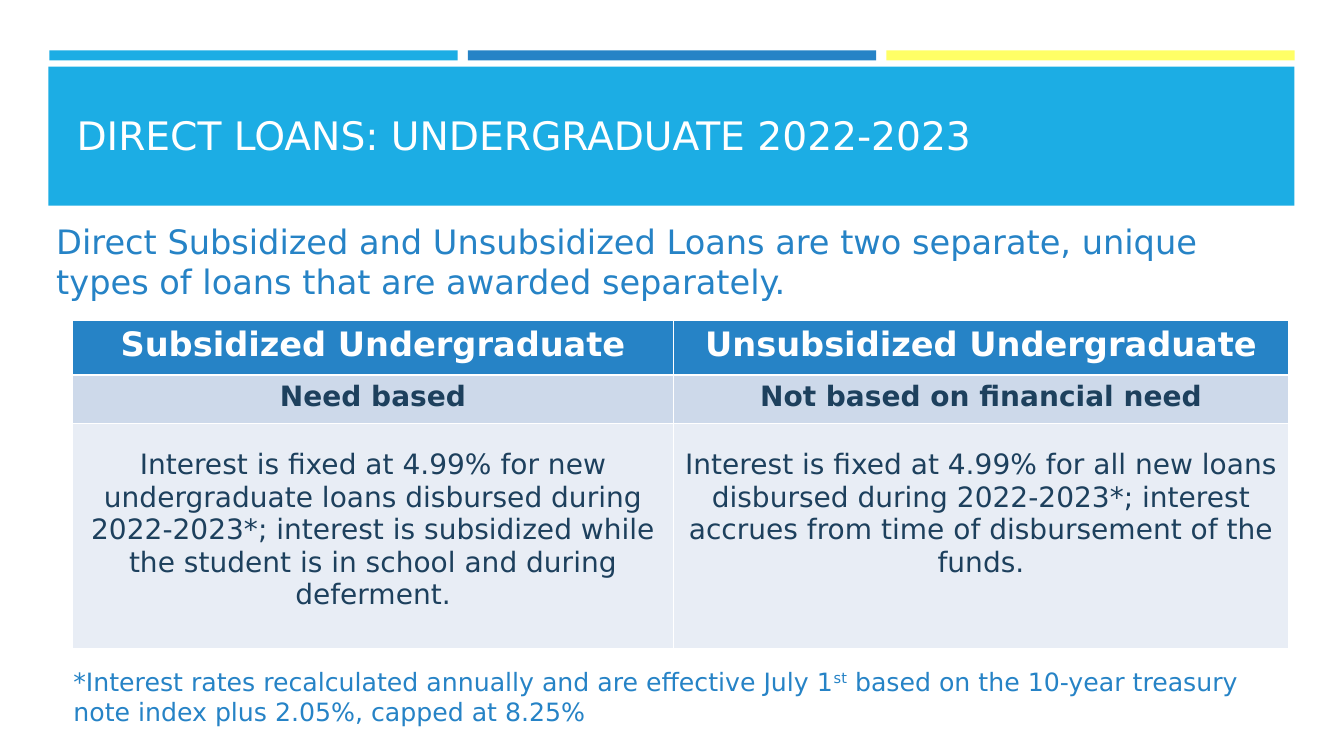
from lxml import etree
from pptx import Presentation
from pptx.dml.color import RGBColor
from pptx.enum.shapes import MSO_SHAPE as Shape
from pptx.enum.text import MSO_ANCHOR as Anchor, PP_ALIGN as Align
from pptx.oxml import parse_xml
from pptx.oxml.ns import nsdecls
from pptx.util import Inches, Pt

COLORS = {"sky": "1CADE4", "blue": "2683C6", "yellow": "FFFF66", "white": "FFFFFF",
          "navy": "1D405D", "band": "CDD9EA", "pale": "E8EDF5"}
FONT = "DejaVu Sans"


def color(name):
    return RGBColor.from_string(COLORS[name])


def style(paragraph, size, color_name, bold=False):
    """Set the font of a whole paragraph."""
    font = paragraph.font
    font.name, font.size, font.bold = FONT, Pt(size), bold
    font.color.rgb = color(color_name)


presentation = Presentation()
presentation.slide_width, presentation.slide_height = Inches(13.33), Inches(7.5)
slide = presentation.slides.add_slide(presentation.slide_layouts[5])
shapes = slide.shapes

# Three accent bars above the title band
bar_width, bar_step = 4.05, 4.15
bars = [(0.49 + bar_step * i, 0.5, bar_width, 0.1, name)
        for i, name in enumerate(("sky", "blue", "yellow"))]
title_band = (0.48, 0.66, 12.36, 1.38, "sky")
for *box, fill in bars + [title_band]:
    rectangle = shapes.add_shape(Shape.RECTANGLE, *map(Inches, box))
    rectangle.shadow.inherit = False
    rectangle.fill.solid()
    rectangle.fill.fore_color.rgb = color(fill)
    rectangle.line.fill.background()

# Title, brought in front of its band
title = shapes.title
title.left, title.top, title.width, title.height = map(Inches, (0.63, 0.8, 12.06, 1.08))
shapes._spTree.append(title._element)
frame = title.text_frame
frame.text = "DIRECT LOANS: UNDERGRADUATE 2022-2023"
frame.vertical_anchor = Anchor.MIDDLE
frame.margin_left = frame.margin_right = frame.margin_top = frame.margin_bottom = Inches(0.13)
frame.paragraphs[0].alignment = Align.LEFT
style(frame.paragraphs[0], 28, "white")

# Introduction and footnote; each run is (text, is superscript)
texts = [
    ((0.46, 2.14, 12.4, 1), 24, [
        ("Direct Subsidized and Unsubsidized Loans are two separate, unique types of loans "
         "that are awarded separately.", False)]),
    ((0.63, 6.56, 12.14, 0.71), 18, [
        ("*Interest rates recalculated annually and are effective July 1", False),
        ("st", True),
        (" based on the 10-year treasury note index plus 2.05%, capped at 8.25%", False)]),
]
for box, size, runs in texts:
    frame = shapes.add_textbox(*map(Inches, box)).text_frame
    frame.word_wrap = True
    paragraph = frame.paragraphs[0]
    style(paragraph, size, "blue")
    for text, superscript in runs:
        run = paragraph.add_run()
        run.text = text
        if superscript:
            run.font._element.set("baseline", "30000")

# Loan comparison: height, fill, text colour, size, bold, top margin, cell texts
rows = [
    (0.54, "blue", "white", 24, True, 0.05,
     ("Subsidized Undergraduate", "Unsubsidized Undergraduate")),
    (0.48, "band", "navy", 20, True, 0.05,
     ("Need based", "Not based on financial need")),
    (2.23, "pale", "navy", 20, False, 0.25,
     ("Interest is fixed at 4.99% for new undergraduate loans disbursed during 2022-2023*; "
      "interest is subsidized while the student is in school and during deferment.",
      "Interest is fixed at 4.99% for all new loans disbursed during 2022-2023*; "
      "interest accrues from time of disbursement of the funds.")),
]
column_widths = (5.96, 6.1)
table = shapes.add_table(len(rows), len(column_widths), Inches(0.72), Inches(3.18),
                         Inches(sum(column_widths)), Inches(sum(row[0] for row in rows))).table
for column, width in zip(table.columns, column_widths):
    column.width = Inches(width)
for r, (height, fill, text_color, size, bold, margin_top, cell_texts) in enumerate(rows):
    table.rows[r].height = Inches(height)
    for c, text in enumerate(cell_texts):
        cell = table.cell(r, c)
        cell.text = text
        cell.margin_top = Inches(margin_top)
        cell.fill.solid()
        cell.fill.fore_color.rgb = color(fill)
        paragraph = cell.text_frame.paragraphs[0]
        paragraph.alignment = Align.CENTER
        style(paragraph, size, text_color, bold)
        properties = cell._tc.get_or_add_tcPr()
        for position, side in enumerate("LRTB"):
            border = parse_xml(f'<a:ln{side} {nsdecls("a")} w="{Pt(1)}"/>')
            solid = etree.SubElement(border, border.tag.replace(f"ln{side}", "solidFill"))
            etree.SubElement(solid, solid.tag.replace("solidFill", "srgbClr"),
                             val=COLORS["white"])
            properties.insert(position, border)

presentation.save("out.pptx")
